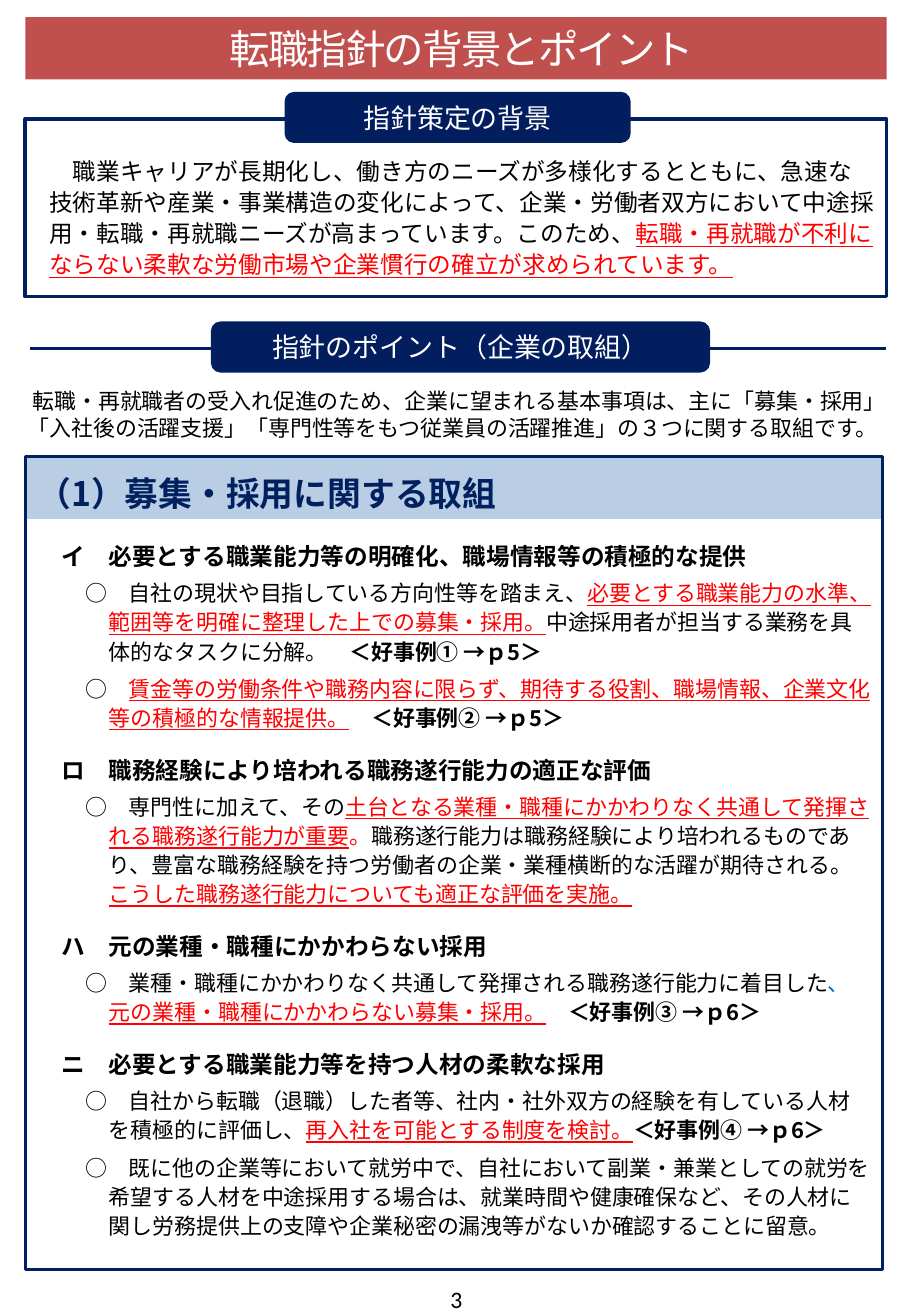
from dataclasses import dataclass
from lxml.etree import SubElement
from pptx import Presentation
from pptx.dml.color import RGBColor
from pptx.enum.shapes import MSO_CONNECTOR, MSO_SHAPE
from pptx.enum.text import MSO_ANCHOR, MSO_AUTO_SIZE, PP_ALIGN
from pptx.oxml.ns import qn
from pptx.util import Cm, Pt


@dataclass(frozen=True)
class Theme:
    black: str = "000000"
    white: str = "FFFFFF"
    red: str = "FF0000"
    blue: str = "0070C0"
    navy: str = "002060"
    pill: str = "021E5E"
    brick: str = "C0504D"
    band: str = "B9CDE5"
    kanji: str = "Noto Sans CJK JP"
    latin: str = "Calibri"
    title: int = 24
    head: int = 20
    label: int = 16
    lead: int = 14
    body: int = 13


T = Theme()
KEY, RED, BLUE, REF = "key", "red", "blue", "ref"

REASON = [
    "　職業キャリアが長期化し、働き方のニーズが多様化するとともに、急速な技術革新や産業・事業構造の変化によって、企業・労働者双方において中途採用・転職・再就職ニーズが高まっています。このため、",
    ("転職・再就職が不利にならない柔軟な労働市場や企業慣行の確立が求められています。", KEY),
]
INTRO = " 転職・再就職者の受入れ促進のため、企業に望まれる基本事項は、主に「募集・採用」「入社後の活躍支援」「専門性等をもつ従業員の活躍推進」の３つに関する取組です。"
TOPICS = [
    ("イ　必要とする職業能力等の明確化、職場情報等の積極的な提供", [
        ["○　自社の現状や目指している方向性等を踏まえ、",
         ("必要とする職業能力の水準、範囲等を明確に整理した上での募集・採用。", KEY),
         "中途採用者が担当する業務を具体的なタスクに分解。　",
         ("＜好事例① →ｐ5＞", REF)],
        ["○　",
         ("賃金等の労働条件や職務内容に限らず、期待する役割、職場情報、企業文化等の積極的な情報提供。", KEY),
         "　", ("＜好事例② →ｐ5＞", REF)],
    ]),
    ("ロ　職務経験により培われる職務遂行能力の適正な評価", [
        ["○　専門性に加えて、その",
         ("土台となる業種・職種にかかわりなく共通して発揮される職務遂行能力が重要", KEY),
         ("。", RED),
         "職務遂行能力は職務経験により培われるものであり、豊富な職務経験を持つ労働者の企業・業種横断的な活躍が期待される。",
         ("こうした職務遂行能力についても適正な評価を実施。", KEY)],
    ]),
    ("ハ　元の業種・職種にかかわらない採用", [
        ["○　業種・職種にかかわりなく共通して発揮される職務遂行能力に着目した",
         ("、", BLUE), ("元の業種・職種にかかわらない募集・採用。", KEY),
         "　", ("＜好事例③ →ｐ6＞", REF)],
    ]),
    ("ニ　必要とする職業能力等を持つ人材の柔軟な採用", [
        ["○　自社から転職（退職）した者等、社内・社外双方の経験を有している人材を積極的に評価し、",
         ("再入社を可能とする制度を検討。", KEY), ("＜好事例④ →ｐ6＞", REF)],
        ["○　既に他の企業等において就労中で、自社において副業・兼業としての就労を希望する人材を中途採用する場合は、就業時間や健康確保など、その人材に関し労務提供上の支障や企業秘密の漏洩等がないか確認することに留意。"],
    ]),
]


def tint(color):
    return RGBColor.from_string(color)


def style(para, size, color=T.black, face=T.kanji, bold=False):
    font = para.font
    font.size, font.bold, font.name = Pt(size), bold, face
    font.color.rgb = tint(color)
    SubElement(font._rPr, qn("a:ea")).set("typeface", face)


def write(para, parts):
    for part in parts:
        text, mark = (part, None) if isinstance(part, str) else part
        run = para.add_run()
        run.text = text
        if mark == REF:
            run.font.bold = True
        elif mark:
            run.font.color.rgb = tint(T.blue if mark == BLUE else T.red)
            if mark == KEY:
                run.font.underline = True


def indent(para, margin, first):
    props = para._p.get_or_add_pPr()
    props.set("marL", str(Cm(margin)))
    props.set("indent", str(Cm(first)))


def block(slide, box, kind=MSO_SHAPE.RECTANGLE, fill=None, line=None, width=2.25):
    shape = slide.shapes.add_shape(kind, *map(Cm, box))
    shape.shadow.inherit = False
    if fill:
        shape.fill.solid()
        shape.fill.fore_color.rgb = tint(fill)
    else:
        shape.fill.background()
    if line:
        shape.line.color.rgb = tint(line)
        shape.line.width = Pt(width)
    else:
        shape.line.fill.background()
    return shape


def setup(shape, anchor=MSO_ANCHOR.MIDDLE, align=PP_ALIGN.LEFT):
    frame = shape.text_frame
    frame.word_wrap = True
    frame.auto_size = MSO_AUTO_SIZE.NONE
    frame.vertical_anchor = anchor
    para = frame.paragraphs[0]
    para.alignment = align
    return frame, para


def heading(slide, box):
    title = slide.shapes.title
    title.left, title.top, title.width, title.height = map(Cm, box)
    shape = SubElement(title._element.spPr, qn("a:prstGeom"))
    shape.set("prst", "roundRect")
    SubElement(shape, qn("a:avLst"))
    title.fill.solid()
    title.fill.fore_color.rgb = tint(T.brick)
    frame, para = setup(title, align=PP_ALIGN.CENTER)
    frame.margin_left = Cm(0.5)
    write(para, ["転職指針の背景とポイント"])
    style(para, T.title, T.white)
    para.runs[0]._r.get_or_add_rPr().set("spc", "-120")


def pill(slide, box, text):
    shape = block(slide, box, MSO_SHAPE.ROUNDED_RECTANGLE, T.pill, T.navy)
    frame, para = setup(shape, align=PP_ALIGN.CENTER)
    write(para, [text])
    style(para, T.label, T.white, T.latin)


def reason(slide, box):
    x, y, w, h = box
    frame, para = setup(block(slide, box, fill=T.white, line=T.navy), MSO_ANCHOR.TOP)
    frame.margin_top = Cm(0.72)
    indent(para, 0.25, 0)
    para.line_spacing = Pt(18.5)
    write(para, REASON)
    style(para, T.lead)
    pill(slide, (x + 5.46, y - 0.53, 7.16, 0.99), "指針策定の背景")


def points(slide, box):
    x, y, w, h = box
    rule = slide.shapes.add_connector(
        MSO_CONNECTOR.STRAIGHT, Cm(x + 0.3), Cm(y + 0.53), Cm(x + 18.19), Cm(y + 0.53))
    rule.line.color.rgb = tint(T.navy)
    rule.line.width = Pt(1.5)
    SubElement(rule._element.spPr, qn("a:effectLst"))
    pill(slide, (x + 4.12, y, 10.36, 0.99), "指針のポイント（企業の取組）")
    note = slide.shapes.add_textbox(Cm(x), Cm(y + 0.99), Cm(w), Cm(h - 0.99))
    frame, para = setup(note)
    para.line_spacing = Pt(16)
    write(para, [INTRO])
    style(para, T.body)


def efforts(slide, box):
    x, y, w, h = box
    band = block(slide, (x, y, w, 1.3), fill=T.band)
    frame, para = setup(band)
    frame.margin_top, frame.margin_bottom = Cm(0.2), 0
    write(para, ["（1）募集・採用に関する取組"])
    style(para, T.head, T.navy, bold=True)
    block(slide, box, line=T.navy, width=2)
    area = slide.shapes.add_textbox(Cm(x), Cm(y + 1.6), Cm(w), Cm(h - 1.95))
    frame, para = setup(area, MSO_ANCHOR.TOP)
    for rank, (topic, items) in enumerate(TOPICS):
        if rank:
            para = frame.add_paragraph()
            para.space_before = Pt(13)
        indent(para, 0, 0.5)
        para.line_spacing, para.space_after = Pt(18.5), Pt(4)
        write(para, [topic])
        style(para, T.lead, bold=True)
        for place, parts in enumerate(items):
            para = frame.add_paragraph()
            indent(para, 1.5, -0.5)
            para.line_spacing = Pt(17.2)
            para.space_before = Pt(5 if place else 0)
            write(para, parts)
            style(para, T.body)


def folio(slide, box):
    frame, para = setup(slide.shapes.add_textbox(*map(Cm, box)), align=PP_ALIGN.CENTER)
    write(para, ["3"])
    style(para, T.lead, face=T.latin)


def main():
    deck = Presentation()
    deck.slide_width, deck.slide_height = Cm(19.05), Cm(27.51)
    slide = deck.slides.add_slide(deck.slide_layouts[5])
    heading(slide, (0.53, 0.36, 18.01, 1.3))
    reason(slide, (0.53, 2.49, 18.01, 3.71))
    points(slide, (0.33, 6.76, 18.72, 2.79))
    efforts(slide, (0.53, 9.55, 17.93, 16.99))
    folio(slide, (7.32, 26.77, 4.45, 0.76))
    deck.save("out.pptx")


if __name__ == "__main__":
    main()
